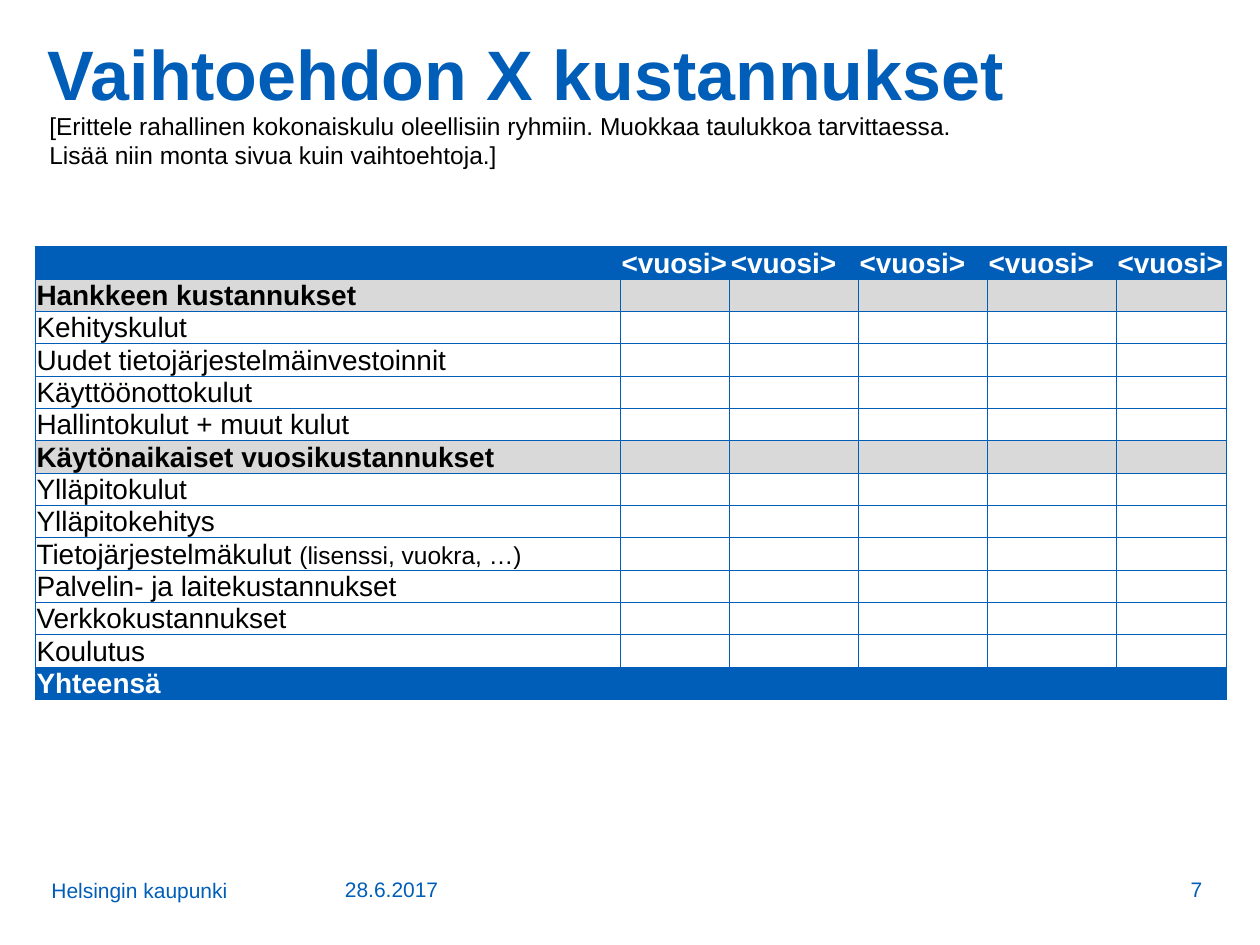
from lxml.etree import SubElement
from pptx import Presentation
from pptx.dml.color import RGBColor
from pptx.enum.text import MSO_ANCHOR, PP_ALIGN
from pptx.oxml.ns import qn
from pptx.util import Pt

COLORS = {"blue": "005EB8", "gray": "D9D9D9", "white": "FFFFFF", "black": "000000"}


def write(paragraph, text, size=16, color="black", bold=False, align=PP_ALIGN.LEFT):
    """Add a formatted run to a paragraph."""
    paragraph.alignment = align
    run = paragraph.add_run()
    run.text = text
    run.font.name = "Arial"
    run.font.size = Pt(size)
    run.font.bold = bold
    run.font.color.rgb = RGBColor.from_string(COLORS[color])


def add_borders(cell):
    """Draw a thin blue line on all four sides of a cell."""
    properties = cell._tc.get_or_add_tcPr()
    for index, side in enumerate(("a:lnL", "a:lnR", "a:lnT", "a:lnB")):
        line = properties.makeelement(qn(side), {"w": str(Pt(0.5))})
        fill = SubElement(line, qn("a:solidFill"))
        SubElement(fill, qn("a:srgbClr"), val=COLORS["blue"])
        properties.insert(index, line)


presentation = Presentation()
presentation.slide_width = Pt(720)
presentation.slide_height = Pt(540)
slide = presentation.slides.add_slide(presentation.slide_layouts[5])

# Title
title = slide.shapes.title
title.left, title.top, title.width, title.height = Pt(20.2), Pt(18), Pt(664), Pt(59.8)
title.text_frame.vertical_anchor = MSO_ANCHOR.TOP
title.text_frame.margin_top = Pt(7)
title.text_frame.paragraphs[0].line_spacing = 0.85
write(title.text_frame.paragraphs[0], "Vaihtoehdon X kustannukset", size=40,
      color="blue", bold=True)

# Cost table: text, smaller note, row style
ROWS = [
    ("", "", "band"),
    ("Hankkeen kustannukset", "", "group"),
    ("Kehityskulut", "", "item"),
    ("Uudet tietojärjestelmäinvestoinnit", "", "item"),
    ("Käyttöönottokulut", "", "item"),
    ("Hallintokulut + muut kulut", "", "item"),
    ("Käytönaikaiset vuosikustannukset", "", "group"),
    ("Ylläpitokulut", "", "item"),
    ("Ylläpitokehitys", "", "item"),
    ("Tietojärjestelmäkulut ", "(lisenssi, vuokra, …)", "item"),
    ("Palvelin- ja laitekustannukset", "", "item"),
    ("Verkkokustannukset", "", "item"),
    ("Koulutus", "", "item"),
    ("Yhteensä", "", "band"),
]
STYLES = {  # fill, text color, bold
    "band": ("blue", "white", True),
    "group": ("gray", "black", True),
    "item": (None, "black", False),
}
COLUMN_WIDTHS = [334.3, 62.4, 73.7, 73.7, 73.7, 63]
ROW_HEIGHT = 18

table = slide.shapes.add_table(
    len(ROWS), len(COLUMN_WIDTHS), Pt(20.2), Pt(141),
    Pt(sum(COLUMN_WIDTHS)), Pt(ROW_HEIGHT * len(ROWS))).table
for column, width in zip(table.columns, COLUMN_WIDTHS):
    column.width = Pt(width)

for row_index, (label, note, style) in enumerate(ROWS):
    fill, color, bold = STYLES[style]
    table.rows[row_index].height = Pt(ROW_HEIGHT)
    for column_index in range(len(COLUMN_WIDTHS)):
        cell = table.cell(row_index, column_index)
        cell.margin_left = cell.margin_right = cell.margin_top = Pt(0.7)
        cell.margin_bottom = 0
        cell.vertical_anchor = MSO_ANCHOR.BOTTOM
        if fill:
            cell.fill.solid()
            cell.fill.fore_color.rgb = RGBColor.from_string(COLORS[fill])
        else:
            cell.fill.background()
        add_borders(cell)

        paragraph = cell.text_frame.paragraphs[0]
        if column_index == 0:
            text = label
        else:
            text = "<vuosi>" if row_index == 0 else ""
        if text:
            write(paragraph, text, color=color, bold=bold)
            if column_index == 0 and note:
                write(paragraph, note, size=14)
        else:  # keeps empty cells from stretching the row
            SubElement(paragraph._p, qn("a:endParaRPr"), sz="1400")

# Instruction and footer: lines, box, size, color, anchor, align, margin
LEFT, RIGHT = PP_ALIGN.LEFT, PP_ALIGN.RIGHT
TOP, BOTTOM = MSO_ANCHOR.TOP, MSO_ANCHOR.BOTTOM
INSTRUCTION = [
    "[Erittele rahallinen kokonaiskulu oleellisiin ryhmiin. Muokkaa taulukkoa tarvittaessa.",
    "Lisää niin monta sivua kuin vaihtoehtoja.]",
]
TEXT_BOXES = [
    (["28.6.2017"], (190, 491, 111.6, 28), 12, "blue", BOTTOM, LEFT, 7.2),
    (["Helsingin kaupunki"], (22.3, 482.4, 167.7, 36.7), 12, "blue", BOTTOM, LEFT, 7.2),
    (["7"], (609, 491, 85, 28), 12, "blue", BOTTOM, RIGHT, 7.2),
    (INSTRUCTION, (25.2, 60.5, 663, 39.6), 14, "black", TOP, LEFT, 3),
]
for lines, box, size, color, anchor, align, margin in TEXT_BOXES:
    frame = slide.shapes.add_textbox(*map(Pt, box)).text_frame
    frame.word_wrap = True
    frame.vertical_anchor = anchor
    frame.margin_left = frame.margin_right = Pt(margin)
    frame.margin_top = frame.margin_bottom = Pt(min(margin, 3.6))
    for index, line in enumerate(lines):
        paragraph = frame.add_paragraph() if index else frame.paragraphs[0]
        write(paragraph, line, size=size, color=color, align=align)

presentation.save("out.pptx")
